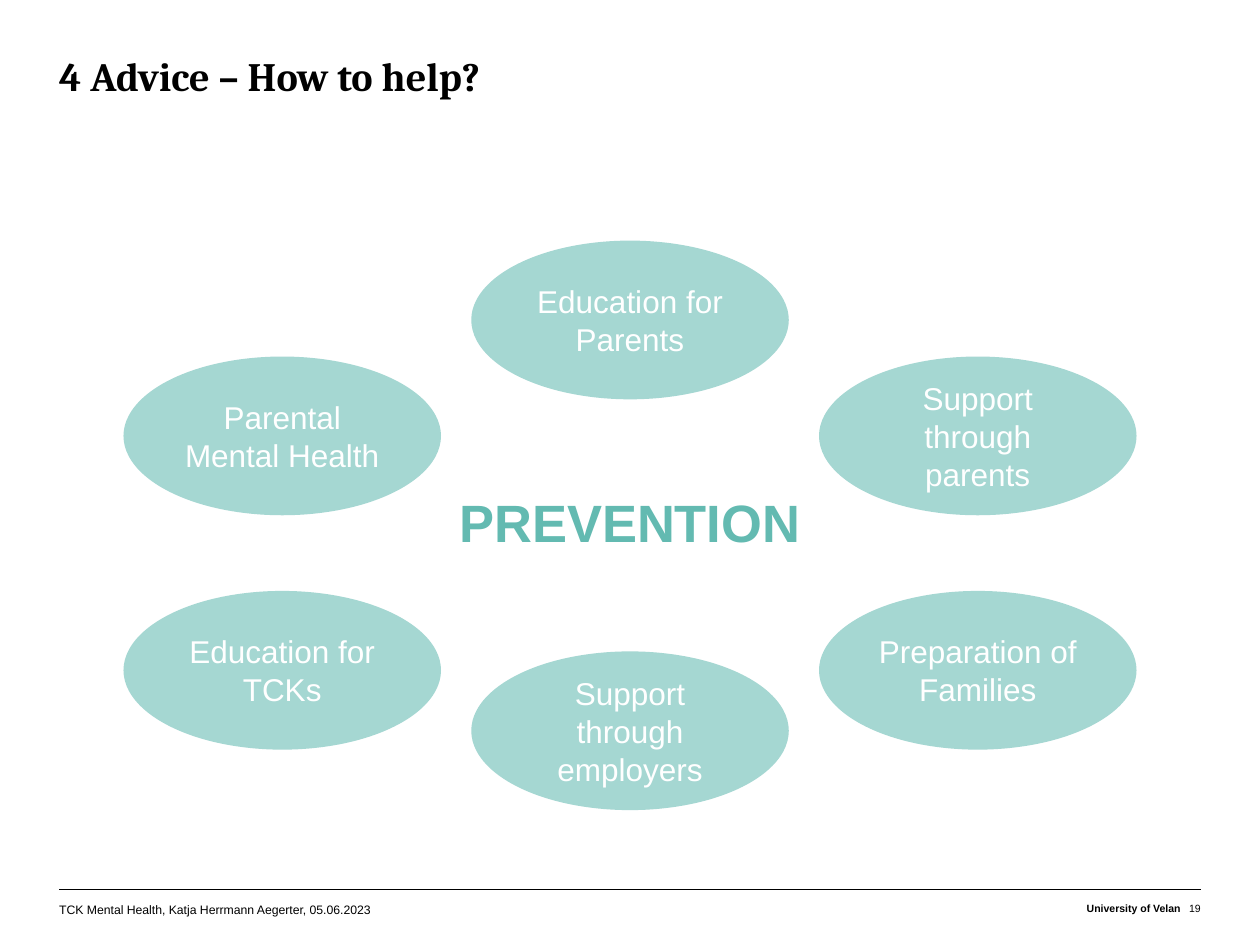
from dataclasses import dataclass

from pptx import Presentation
from pptx.dml.color import RGBColor
from pptx.enum.shapes import MSO_CONNECTOR as Connector, MSO_SHAPE as Shape
from pptx.enum.text import MSO_ANCHOR as Anchor, PP_ALIGN as Align
from pptx.oxml.ns import qn
from pptx.util import Inches, Pt
from lxml.etree import SubElement


@dataclass(frozen=True)
class Theme:
    """Colours, fonts and type sizes of the slide."""
    ink: str = "000000"
    accent: str = "63BAB1"
    bubble: str = "A5D7D2"
    light: str = "FFFFFF"
    heading_font: str = "Cambria"
    body_font: str = "Arial"
    title_size: float = 23
    centre_size: float = 30
    bubble_size: float = 18
    footer_size: float = 7
    small_size: float = 6


class SlideBuilder:
    """Holds the theme and the current slide and adds elements to it."""

    def __init__(self, slide, theme):
        """Keep the slide and its theme."""
        self.slide = slide
        self.theme = theme

    def set_text(self, shape, text, size, color, font=None, bold=False, align=Align.LEFT,
                 anchor=Anchor.TOP, spacing=None, insets=None):
        """Put one formatted paragraph into a shape."""
        frame = shape.text_frame
        frame.word_wrap = True
        frame.vertical_anchor = anchor
        if insets is not None:
            frame.margin_left, frame.margin_top, frame.margin_right, frame.margin_bottom = map(Inches, insets)
        frame.text = text
        paragraph = frame.paragraphs[0]
        paragraph.alignment = align
        if spacing:
            paragraph.line_spacing = Pt(spacing)
        paragraph.font.name = font or self.theme.body_font
        paragraph.font.size = Pt(size)
        paragraph.font.bold = bold
        paragraph.font.color.rgb = RGBColor.from_string(color)

    def title(self, text, box):
        """Place and format the title placeholder."""
        title = self.slide.shapes.title
        title.left, title.top, title.width, title.height = map(Inches, box)
        self.set_text(title, text, self.theme.title_size, self.theme.ink, self.theme.heading_font,
                      bold=True, spacing=25, insets=(0, 0, 0, 0))

    def text(self, text, box, size, color, insets=(0, 0.02, 0, 0), **style):
        """Add a text box."""
        shape = self.slide.shapes.add_textbox(*map(Inches, box))
        self.set_text(shape, text, size, color, insets=insets, **style)

    def bubble(self, text, box):
        """Add a filled ellipse with centred text."""
        shape = self.slide.shapes.add_shape(Shape.OVAL, *map(Inches, box))
        shape.shadow.inherit = False
        shape.fill.solid()
        shape.fill.fore_color.rgb = RGBColor.from_string(self.theme.bubble)
        shape.line.fill.background()
        self.set_text(shape, text, self.theme.bubble_size, self.theme.light,
                      align=Align.CENTER, anchor=Anchor.MIDDLE)

    def rule(self, left, right, top):
        """Add a thin horizontal line."""
        line = self.slide.shapes.add_connector(
            Connector.STRAIGHT, Inches(left), Inches(top), Inches(right), Inches(top))
        line.line.width = Pt(0.25)
        line.line.color.rgb = RGBColor.from_string(self.theme.ink)
        SubElement(line._element.spPr, qn("a:effectLst"))


def main():
    """Build the prevention slide and save it."""
    presentation = Presentation()
    presentation.slide_width, presentation.slide_height = Inches(10), Inches(7.5)
    theme = Theme()
    builder = SlideBuilder(presentation.slides.add_slide(presentation.slide_layouts[5]), theme)

    left, right = 0.47, 9.53
    width = right - left
    builder.rule(left, right, 7.06)
    builder.title("4 Advice – How to help?", (left, 0.44, width, 0.83))
    builder.text("PREVENTION", (left, 1.66, width, 5.16), theme.centre_size, theme.accent,
                 insets=(0, 0, 0, 0), bold=True, align=Align.CENTER, anchor=Anchor.MIDDLE, spacing=22)

    bubble_width, bubble_height, column_step = 2.52, 1.26, 2.76
    columns = [
        ((2.83, "Parental Mental Health"), (4.69, "Education for TCKs")),
        ((1.91, "Education for Parents"), (5.17, "Support through employers")),
        ((2.83, "Support through parents"), (4.69, "Preparation of Families")),
    ]
    for index, column in enumerate(columns):
        for top, label in column:
            builder.bubble(label, (0.98 + index * column_step, top, bubble_width, bubble_height))

    footer_top, footer_height = 7.14, 0.2
    builder.text("TCK Mental Health, Katja Herrmann Aegerter, 05.06.2023",
                 (left, footer_top, 2.72, footer_height), theme.footer_size, theme.ink)
    builder.text("University of Velan", (7.28, footer_top, 2.09, footer_height),
                 theme.small_size, theme.ink, bold=True, align=Align.RIGHT)
    builder.text("19", (9.37, footer_top, 0.16, footer_height),
                 theme.small_size, theme.ink, align=Align.RIGHT)
    presentation.save("out.pptx")


if __name__ == "__main__":
    main()
